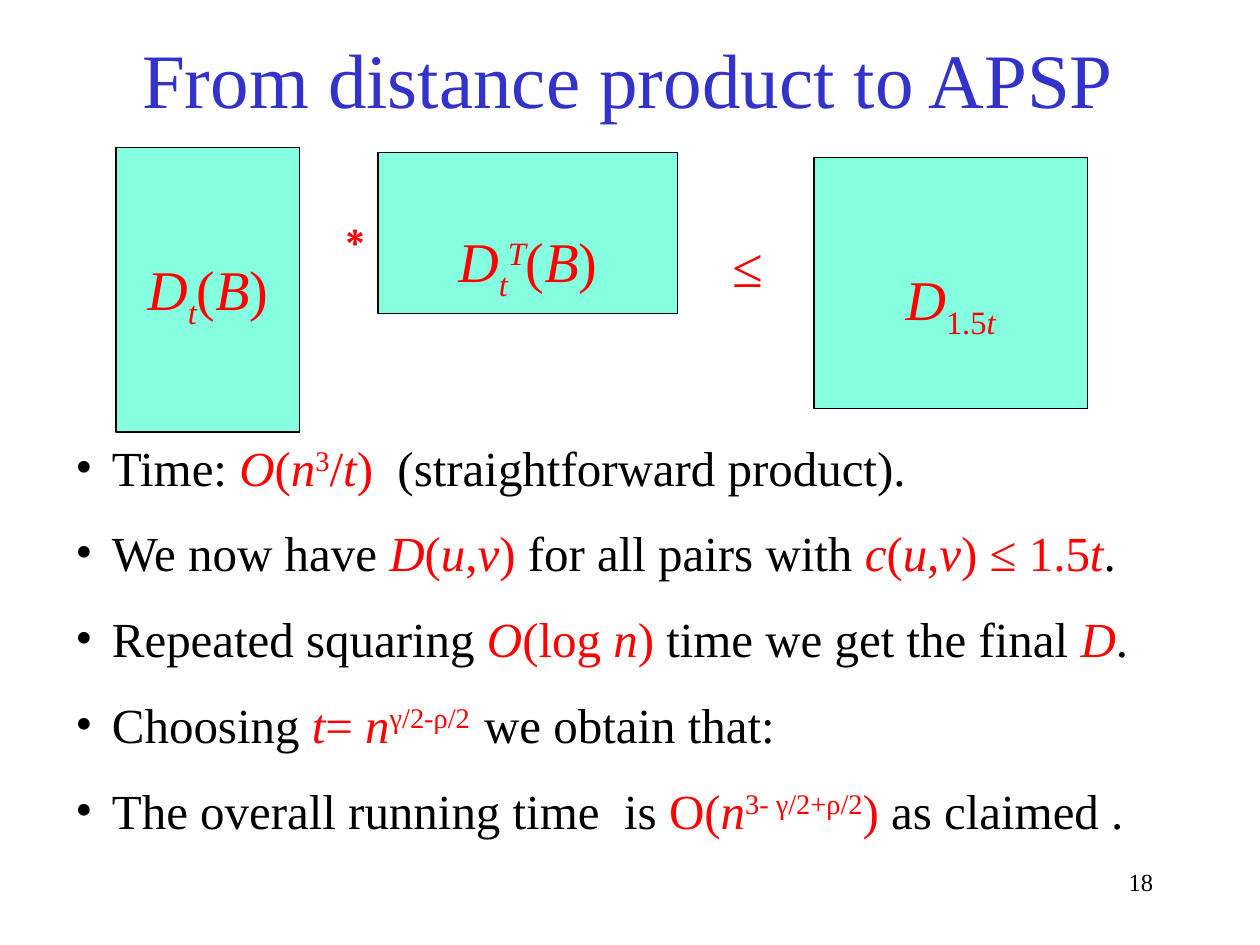
from lxml.etree import SubElement
from pptx import Presentation
from pptx.dml.color import RGBColor
from pptx.enum.shapes import MSO_SHAPE as Shape
from pptx.enum.text import MSO_ANCHOR as Anchor, PP_ALIGN as Align
from pptx.oxml.ns import qn
from pptx.util import Inches, Pt

FONT = "Times New Roman"
BLACK = RGBColor(0x00, 0x00, 0x00)
RED = RGBColor(0xFF, 0x00, 0x00)
BLUE = RGBColor(0x33, 0x33, 0xCC)
MINT = RGBColor(0x85, 0xFF, 0xE0)

# Run styles: r red, i red italic, ^ superscript, _ subscript; none is plain.
BULLETS = [
    [("Time: ", ""), ("O", "i"), ("(", "r"), ("n", "i"), ("3", "r^"), ("/", "r"),
     ("t", "i"), (") ", "r"), (" (straightforward product).", "")],
    [("We now have ", ""), ("D", "i"), ("(", "r"), ("u", "i"), (",", "r"),
     ("v", "i"), (") ", "r"), ("for all pairs with ", ""), ("c", "i"), ("(", "r"),
     ("u", "i"), (",", "r"), ("v", "i"), (") ≤ 1.5", "r"), ("t", "i"), (".", "")],
    [("Repeated squaring ", ""), ("O", "i"), ("(log ", "r"), ("n", "i"),
     (")", "r"), (" time we get the final ", ""), ("D", "i"), (".", "")],
    [("Choosing ", ""), ("t", "i"), ("= ", "r"), ("n", "i"),
     ("γ/2-ρ/2  ", "r^"), ("we obtain that:", "")],
    [("The overall running time  is ", ""), ("O(", "r"), ("n", "i"),
     ("3- γ/2+ρ/2", "r^"), (") ", "r"), ("as claimed .", "")],
]

# Left, top, width, height, space above the formula, formula
MATRICES = [
    (0.92, 1.17, 1.46, 2.26, 0.85,
     [("D", "i"), ("t", "i_"), ("(", "r"), ("B", "i"), (")", "r")]),
    (3, 1.21, 2.38, 1.28, 0.59,
     [("D", "i"), ("t", "i_"), ("T", "i^"), ("(", "r"), ("B", "i"), (")", "r")]),
    (6.46, 1.25, 2.17, 1.99, 0.85,
     [("D", "i"), ("1.5", "r_"), ("t", "i_")]),
]

OPERATORS = [("∗", 2.5, 1.46, 0.43), ("≤", 5.71, 1.75, 0.45)]


def format_font(font, size, color):
    font.name = FONT
    font.size = Pt(size)
    font.color.rgb = color


def add_runs(paragraph, runs, size):
    for text, style in runs:
        run = paragraph.add_run()
        run.text = text
        format_font(run.font, size, RED if style else BLACK)
        run.font.italic = "i" in style
        if "^" in style:
            run.font._element.set("baseline", "30000")
        elif "_" in style:
            run.font._element.set("baseline", "-25000")


def add_label(slide, text, left, top, width, height, size, color, align,
              anchor=Anchor.TOP, wrap=True):
    frame = slide.shapes.add_textbox(
        Inches(left), Inches(top), Inches(width), Inches(height)).text_frame
    frame.word_wrap = wrap
    frame.vertical_anchor = anchor
    frame.text = text
    paragraph = frame.paragraphs[0]
    paragraph.alignment = align
    format_font(paragraph.runs[0].font, size, color)
    return frame


def add_matrix(slide, left, top, width, height, space_above, formula):
    shape = slide.shapes.add_shape(
        Shape.RECTANGLE, Inches(left), Inches(top), Inches(width), Inches(height))
    shape.shadow.inherit = False
    shape.fill.solid()
    shape.fill.fore_color.rgb = MINT
    shape.line.color.rgb = BLACK
    shape.line.width = Pt(0.75)
    frame = shape.text_frame
    frame.vertical_anchor = Anchor.TOP
    frame.margin_top = Inches(space_above)
    paragraph = frame.paragraphs[0]
    paragraph.alignment = Align.CENTER
    add_runs(paragraph, formula, 32)


def set_bullet(paragraph):
    """Give the paragraph a round bullet and a hanging indent."""
    properties = paragraph._p.get_or_add_pPr()
    properties.set("marL", str(Inches(0.29)))
    properties.set("indent", str(Inches(-0.29)))
    SubElement(properties, qn("a:buFont"), typeface=FONT)
    SubElement(properties, qn("a:buChar"), char="•")


def add_bullets(slide):
    frame = slide.shapes.add_textbox(
        Inches(0.5), Inches(3.38), Inches(9.25), Inches(3.5)).text_frame
    frame.word_wrap = True
    frame.margin_top = Inches(0.09)
    for index, runs in enumerate(BULLETS):
        paragraph = frame.add_paragraph() if index else frame.paragraphs[0]
        if index:
            paragraph.space_before = Pt(15.4)
        set_bullet(paragraph)
        add_runs(paragraph, runs, 28)


def main():
    presentation = Presentation()
    presentation.slide_width = Inches(10)
    presentation.slide_height = Inches(7.5)
    slide = presentation.slides.add_slide(presentation.slide_layouts[6])

    add_label(slide, "18", 7.17, 6.83, 2.08, 0.5, 14, BLACK, Align.RIGHT)
    add_label(slide, "From distance product to APSP", 0.33, 0.25, 9.31, 0.73,
              44, BLUE, Align.CENTER, Anchor.MIDDLE)
    add_bullets(slide)
    for matrix in MATRICES:
        add_matrix(slide, *matrix)
    for symbol, left, top, width in OPERATORS:
        frame = add_label(slide, symbol, left, top, width, 0.64,
                          32, RED, Align.CENTER, wrap=False)
        frame.margin_top = Inches(0.09)

    presentation.save("out.pptx")


if __name__ == "__main__":
    main()
